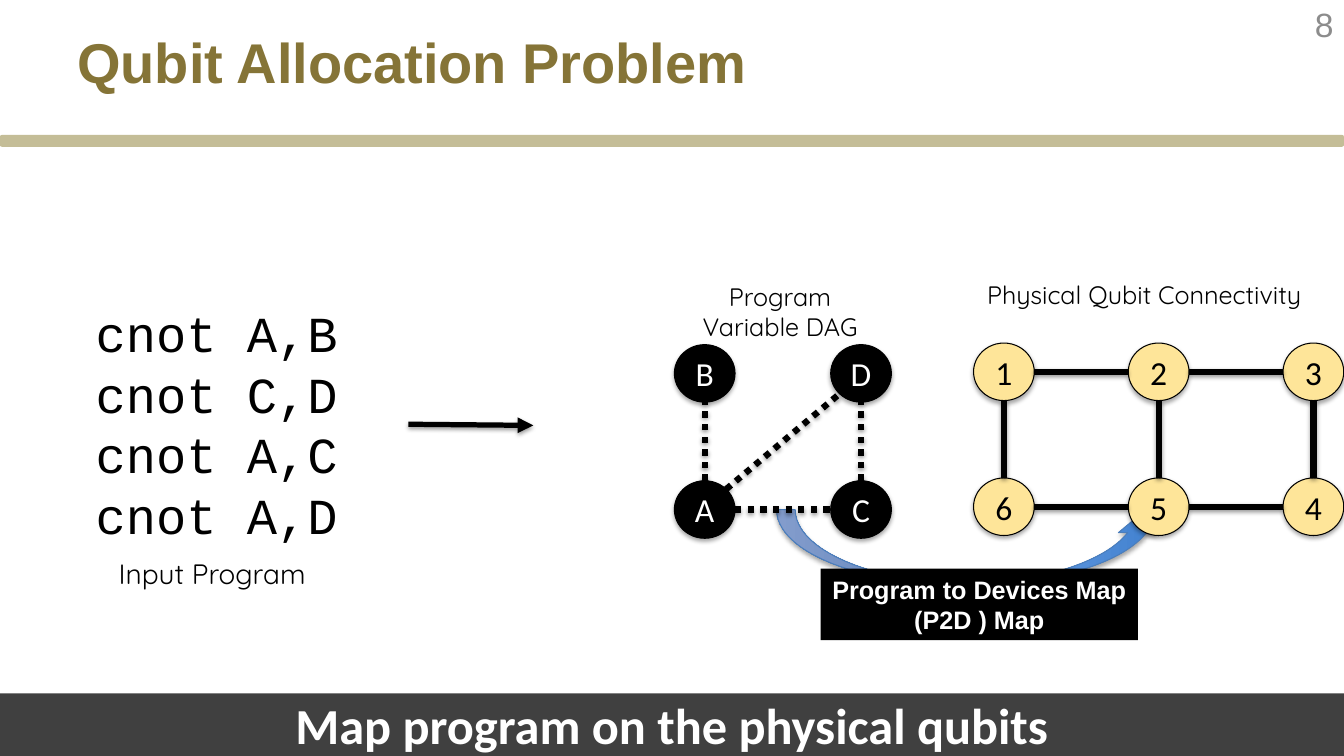
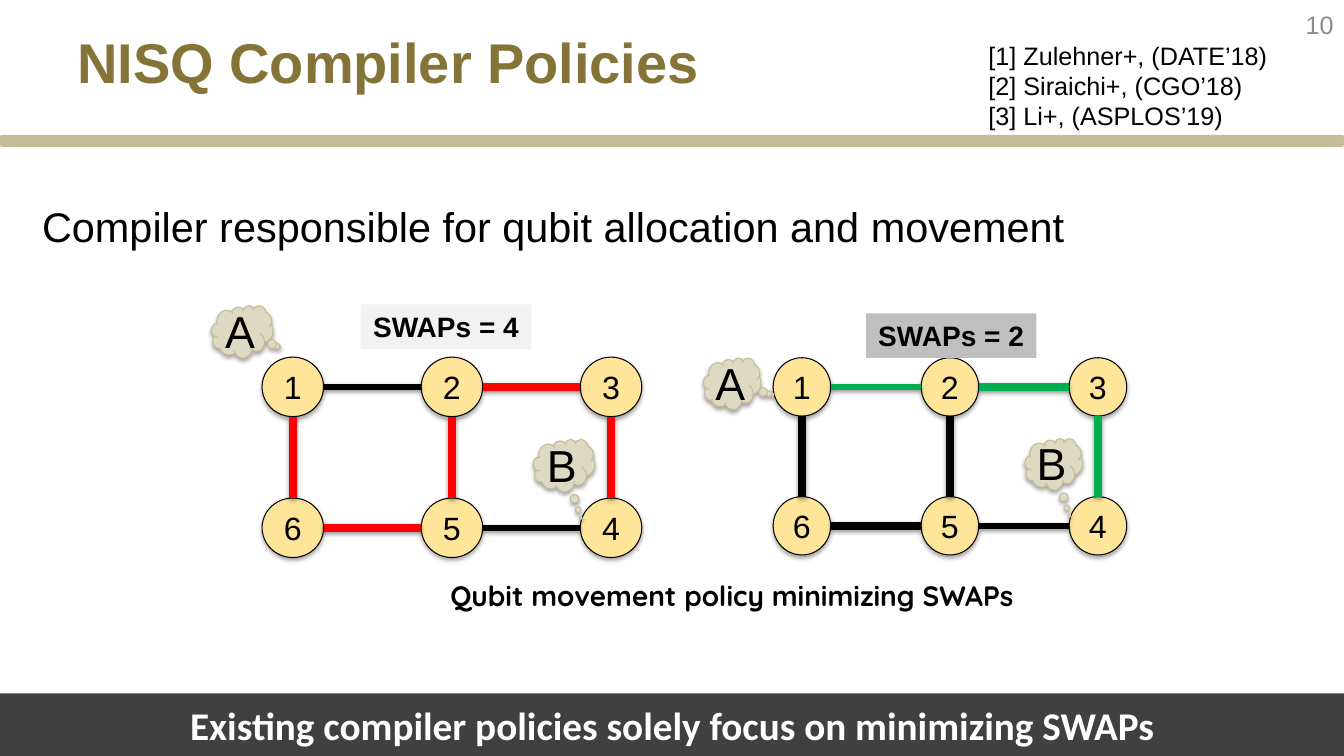
from lxml.etree import SubElement
from math import sqrt
from pptx import Presentation
from pptx.dml.color import RGBColor
from pptx.enum.dml import MSO_LINE
from pptx.enum.shapes import MSO_CONNECTOR, MSO_SHAPE
from pptx.enum.text import MSO_ANCHOR, PP_ALIGN
from pptx.oxml.ns import qn
from pptx.util import Cm, Pt

WIDE, HIGH = 33.87, 19.05
HUES = {
    "black": "000000", "white": "FFFFFF", "gold": "857437", "sand": "C4BD97",
    "gray": "8C8C8C", "dark": "404040", "node": "FEE599", "cloud": "DDD9C3",
    "pale": "F2F2F2", "silver": "BFBFBF", "red": "FF0000", "green": "00B050",
    "edge": "4B7EBC", "deep": "3F80CE", "light": "A4C4FF",
}
RGB = {name: RGBColor.from_string(code) for name, code in HUES.items()}
LOOKS = {
    "title": {"name": "Arial", "size": Pt(40), "bold": True},
    "page": {"name": "Arial", "size": Pt(24)},
    "code": {"name": "Courier New", "size": Pt(36)},
    "foot": {"name": "Calibri", "size": Pt(36), "bold": True},
    "label": {"name": "Quicksand", "size": Pt(18)},
    "note": {"name": "Quicksand", "size": Pt(20)},
    "map": {"name": "Arial", "size": Pt(18), "bold": True},
    "swap": {"name": "Arial", "size": Pt(20), "bold": True},
    "round": {"name": "Calibri", "size": Pt(24)},
    "plain": {"name": "Arial", "size": Pt(23)},
    "cloud": {"name": "Arial", "size": Pt(32)},
    "refs": {"name": "Arial", "size": Pt(18)},
    "body": {"name": "Arial", "size": Pt(29.6)},
}
LEFT, MID, RIGHT = PP_ALIGN.LEFT, PP_ALIGN.CENTER, PP_ALIGN.RIGHT


def box(slide, spot, text="", look="body", ink="black", kind=None,
        fill=None, line=None, align=MID, **font):
    """Add a preset shape, or a text box if kind is None; outlined shapes cast a shadow."""
    place = [Cm(n) for n in spot]
    if kind is None:
        shape = slide.shapes.add_textbox(*place)
        frame = {"word_wrap": True}
    else:
        shape = slide.shapes.add_shape(kind, *place)
        frame = {"word_wrap": True, "vertical_anchor": MSO_ANCHOR.MIDDLE,
                 "margin_left": 0, "margin_right": 0,
                 "margin_top": 0, "margin_bottom": 0}
        if fill:
            shape.fill.solid()
            shape.fill.fore_color.rgb = RGB[fill]
        if line:
            shape.line.color.rgb = RGB[line]
            shape.line.width = Pt(0.75)
        else:
            shape.line.fill.background()
        shape.shadow.inherit = False
        if line:
            effects = shape.element.spPr.find(qn("a:effectLst"))
            shade = SubElement(effects, qn("a:outerShdw"), blurRad="40000",
                               dist="23000", dir="5400000", rotWithShape="0")
            tint = SubElement(shade, qn("a:srgbClr"), val=HUES["black"])
            SubElement(tint, qn("a:alpha"), val="35000")
    for key, value in frame.items():
        setattr(shape.text_frame, key, value)
    for i, words in enumerate(text.split("\n") if text else []):
        para = shape.text_frame.paragraphs[0] if i == 0 else shape.text_frame.add_paragraph()
        para.alignment = align
        run = para.add_run()
        run.text = words
        for key, value in {**LOOKS[look], **font}.items():
            setattr(run.font, key, value)
        run.font.color.rgb = RGB[ink]
    return shape


def link(slide, start, end, hue="black", width=4.5, dash=None):
    line = slide.shapes.add_connector(
        MSO_CONNECTOR.STRAIGHT, *[Cm(n) for n in (*start, *end)])
    line.line.color.rgb = RGB[hue]
    line.line.width = Pt(width)
    if dash:
        line.line.dash_style = dash
    effects = SubElement(line.element.spPr, qn("a:effectLst"))
    shade = SubElement(effects, qn("a:outerShdw"), blurRad="40000",
                       dist="20000", dir="5400000", rotWithShape="0")
    tint = SubElement(shade, qn("a:srgbClr"), val=HUES["black"])
    SubElement(tint, qn("a:alpha"), val="38000")
    return line


deck = Presentation()
deck.slide_width, deck.slide_height = Cm(WIDE), Cm(HIGH)

# Parts that both slides share
slides = []
for title, page, size, foot, big in (
    ("Qubit Allocation Problem", "8", 24, "Map program on the physical qubits", 36),
    ("NISQ Compiler Policies", "10", 18,
     "Existing compiler policies solely focus on minimizing SWAPs", 28),
):
    slide = deck.slides.add_slide(deck.slide_layouts[6])
    box(slide, (0, 3.4, WIDE, 0.3), kind=MSO_SHAPE.ROUNDED_RECTANGLE, fill="sand")
    box(slide, (1.7, 0.56, 22.58, 2.8), title, "title", "gold", align=LEFT)
    number = box(slide, (29.49, 0, 4.37, 1.22), page, "page", "gray",
                 align=RIGHT, size=Pt(size))
    number.text_frame.vertical_anchor = MSO_ANCHOR.MIDDLE
    box(slide, (0, 17.47, WIDE, 1.58), foot, "foot", "white",
        MSO_SHAPE.RECTANGLE, "dark", size=Pt(big))
    slides.append(slide)
first, second = slides

# Program and the map to the device
box(first, (2.16, 7.49, 7, 6.4), "cnot A,B\ncnot C,D\ncnot A,C\ncnot A,D", "code", align=LEFT)
box(first, (2.74, 13.89, 6, 1.12), "Input Program", "note", align=LEFT)
box(first, (17.16, 6.96, 5, 1.8), "Program Variable DAG", "label")
box(first, (24.45, 6.91, 8.77, 1.8), "Physical Qubit Connectivity", "label")
flow = link(first, (10.29, 10.69), (13.44, 10.72), width=3.75)
SubElement(flow.line._get_or_add_ln(), qn("a:tailEnd"), type="triangle")

bend = box(first, (23.52, 8.89, 1.88, 9.78), kind=MSO_SHAPE.CURVED_RIGHT_ARROW, line="edge")
bend.rotation = 270
for i, value in enumerate((0.25, 0.5, 0.31)):
    bend.adjustments[i] = value
bend.fill.gradient()
bend.fill.gradient_angle = 90
for stop, hue in zip(bend.fill.gradient_stops, ("deep", "light")):
    stop.color.rgb = RGB[hue]
box(first, (20.68, 14.33, 8, 1.8), "Program to Devices Map\n(P2D ) Map", "map", "white",
    MSO_SHAPE.RECTANGLE, "black")

# Graphs: rows of nodes, first centre, pitch, node size, node style, edges
DOT = {"dash": MSO_LINE.ROUND_DOT}
RED, BOLD = {"hue": "red", "width": 6}, {"width": 6}
GREEN = {"hue": "green", "width": 6}
graphs = (
    (first, ("BD", "AC"), (17.76, 9.41), (3.94, 3.43), (1.53, 1.45),
     ("round", "white", "black"), {"AD": DOT, "AB": DOT, "CD": DOT, "AC": DOT}),
    (first, ("123", "654"), (25.3, 9.37), (3.9, 3.4), (1.53, 1.45),
     ("round", "black", "node"),
     {pair: {} for pair in ("12", "23", "34", "45", "56", "16", "25")}),
    (second, ("123", "654"), (7.38, 9.75), (4.01, 3.55), (1.55, 1.5),
     ("plain", "black", "node"),
     {"12": {}, "23": RED, "34": RED, "45": {}, "56": RED, "16": RED, "25": RED}),
    (second, ("123", "654"), (20.21, 9.75), (3.73, 3.5), (1.45, 1.47),
     ("plain", "black", "node"),
     {"12": {"hue": "green"}, "23": GREEN, "34": GREEN, "45": {},
      "56": BOLD, "16": BOLD, "25": BOLD}),
)
for slide, rows, origin, pitch, size, (look, ink, fill), edges in graphs:
    spots = {}
    for r, row in enumerate(rows):
        for c, name in enumerate(row):
            x, y = origin[0] + c * pitch[0], origin[1] + r * pitch[1]
            spots[name] = (x, y)
            box(slide, (x - size[0] / 2, y - size[1] / 2, *size), name, look, ink,
                MSO_SHAPE.OVAL, fill, "black")
    for (a, b), style in edges.items():
        gaps = [q - p for p, q in zip(spots[a], spots[b])]
        signs = [(g > 0.01) - (g < -0.01) for g in gaps]
        reach = 1 / sqrt(2) if all(signs) else 1
        steps = [s * reach * n / 2 for s, n in zip(signs, size)]
        link(slide, [p + d for p, d in zip(spots[a], steps)],
             [q - d for q, d in zip(spots[b], steps)], **style)

# Program qubits and swap counts
for name, spot, tail in (
    ("A", (5.33, 7.7, 1.55, 1.32), (0.6, 0.29)),
    ("B", (13.44, 11.07, 1.55, 1.32), (0.27, 1)),
    ("A", (17.73, 9.02, 1.45, 1.3), (0.7, 0.21)),
    ("B", (25.83, 11.05, 1.45, 1.3), (0.27, 1)),
):
    cloud = box(second, spot, name, "cloud", kind=MSO_SHAPE.CLOUD_CALLOUT,
                fill="cloud", line="sand")
    for i, value in enumerate(tail):
        cloud.adjustments[i] = value
for text, x, y, fill in (("SWAPs = 4", 9.09, 7.67, "pale"), ("SWAPs = 2", 21.82, 7.9, "silver")):
    box(second, (x, y, 4.3, 1.12), text, "swap", kind=MSO_SHAPE.RECTANGLE, fill=fill)

box(second, (24.66, 0.89, 8, 2.57),
    "[1] Zulehner+, (DATE’18)\n[2] Siraichi+, (CGO’18)\n[3] Li+, (ASPLOS’19)",
    "refs", align=LEFT)
box(second, (0.81, 4.95, 26.8, 1.73),
    "Compiler responsible for qubit allocation and movement", align=LEFT)
box(second, (11.1, 14.45, 15, 1.12), "Qubit movement policy minimizing SWAPs", "note",
    align=LEFT, bold=True)

deck.save("out.pptx")
